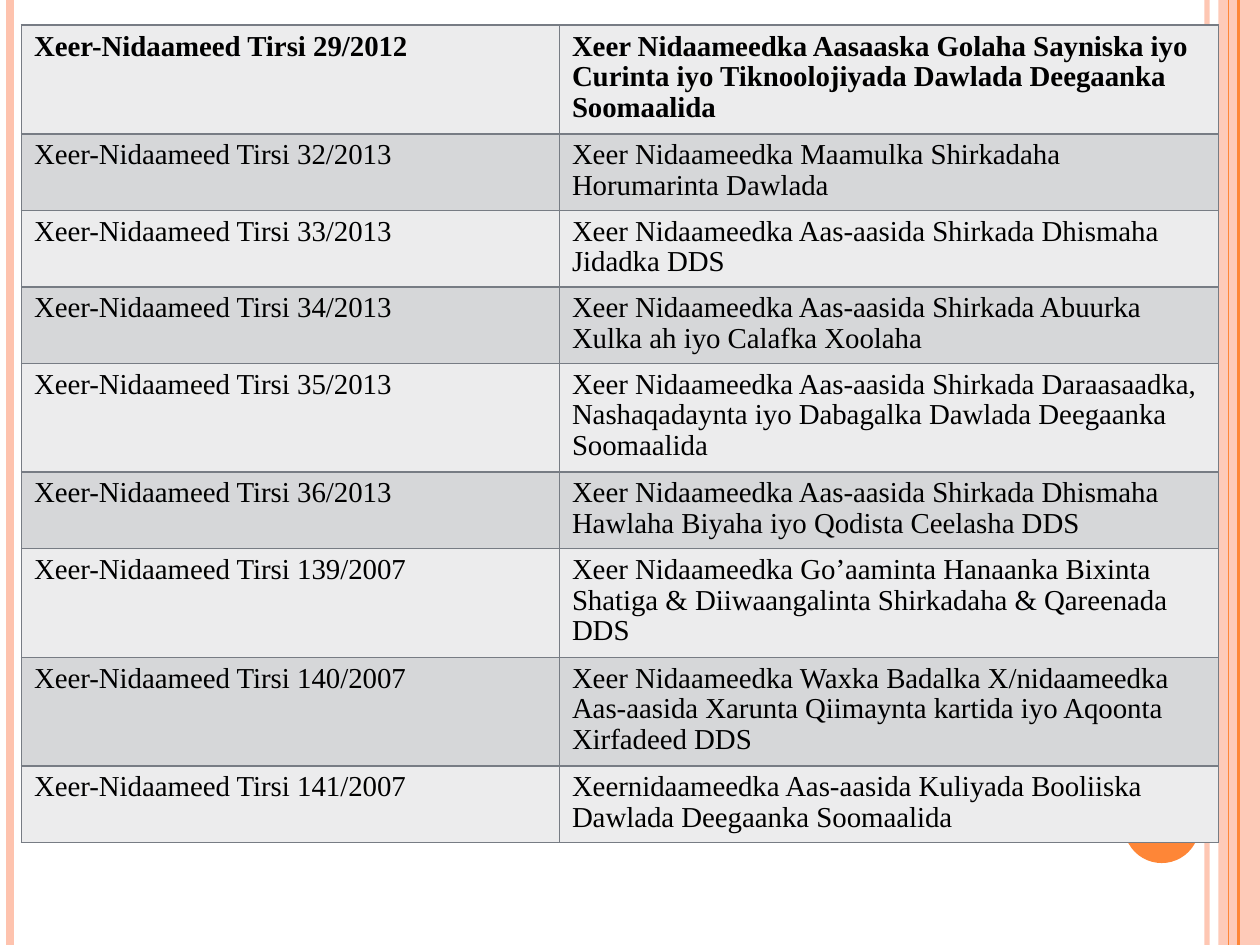
"""Build a slide with a two-column table of numbered regulations."""
from lxml import etree
from pptx import Presentation
from pptx.dml.color import RGBColor
from pptx.enum.shapes import MSO_CONNECTOR, MSO_SHAPE
from pptx.oxml.ns import qn
from pptx.util import Inches, Pt

LINE = MSO_CONNECTOR.STRAIGHT
RECT, OVAL = MSO_SHAPE.RECTANGLE, MSO_SHAPE.OVAL
PEACH, ORANGE, GREY = "FEC3AE", "FE8637", "777C84"
BANDS = ["ECECED", "D6D7D9"]
LAWS = [
    ("29/2012", "Xeer Nidaameedka Aasaaska Golaha Sayniska iyo Curinta iyo Tiknoolojiyada Dawlada Deegaanka Soomaalida", 3),
    ("32/2013", "Xeer Nidaameedka Maamulka Shirkadaha Horumarinta Dawlada", 2),
    ("33/2013", "Xeer Nidaameedka Aas-aasida Shirkada Dhismaha Jidadka DDS", 2),
    ("34/2013", "Xeer Nidaameedka Aas-aasida Shirkada Abuurka Xulka ah iyo Calafka Xoolaha", 2),
    ("35/2013", "Xeer Nidaameedka Aas-aasida Shirkada Daraasaadka, Nashaqadaynta iyo Dabagalka Dawlada Deegaanka Soomaalida", 3),
    ("36/2013", "Xeer Nidaameedka Aas-aasida Shirkada Dhismaha Hawlaha Biyaha iyo Qodista Ceelasha DDS", 2),
    ("139/2007", "Xeer Nidaameedka Go’aaminta Hanaanka Bixinta Shatiga & Diiwaangalinta Shirkadaha & Qareenada DDS", 3),
    ("140/2007", "Xeer Nidaameedka Waxka Badalka X/nidaameedka Aas-aasida Xarunta Qiimaynta kartida iyo Aqoonta Xirfadeed DDS", 3),
    ("141/2007", "Xeernidaameedka Aas-aasida Kuliyada Booliiska Dawlada Deegaanka Soomaalida", 2),
]


def paint(fmt, color, alpha=100):
    fmt.solid()
    fmt.fore_color.rgb = RGBColor.from_string(color)
    if alpha < 100:
        node = fmt._xPr.find(qn("a:solidFill"))[0]
        etree.SubElement(node, qn("a:alpha"), val=str(alpha * 1000))


def edge(cell, side):
    props = cell._tc.get_or_add_tcPr()
    line = etree.Element(qn("a:" + side), w=str(Pt(1)))
    fill = etree.SubElement(line, qn("a:solidFill"))
    etree.SubElement(fill, qn("a:srgbClr"), val=GREY)
    return props, line


prs = Presentation()
prs.slide_width, prs.slide_height = Inches(10), Inches(7.5)
slide = prs.slides.add_slide(prs.slide_layouts[6])
shapes = slide.shapes

stripes = [(9.58, PEACH, 3, 93), (0.08, PEACH, 4.5, 100),
           (9.83, ORANGE, 1.5, 100), (9.75, ORANGE, 0.75, 100)]
blocks = [(RECT, 9.67, 0, 0.33, 7.5, PEACH, 87),
          (OVAL, 8.92, 6.25, 0.6, 0.6, ORANGE, 100)]

for kind, x, y, w, h, color, alpha in blocks:
    block = shapes.add_shape(kind, Inches(x), Inches(y), Inches(w), Inches(h))
    block.shadow.inherit = False
    block.line.fill.background()
    paint(block.fill, color, alpha)

for x, color, width, alpha in stripes:
    stripe = shapes.add_connector(LINE, Inches(x), 0, Inches(x), Inches(7.5))
    stripe.line.width = Pt(width)
    paint(stripe.line.fill, color, alpha)
    etree.SubElement(stripe._element.spPr, qn("a:effectLst"))

high = sum(0.1 + 0.254 * count for _, _, count in LAWS)
frame = shapes.add_table(len(LAWS), 2, Inches(0.17), Inches(0.2), Inches(9.5), Inches(high))
table = frame.table
for column, width in zip(table.columns, (4.27, 5.23)):
    column.width = Inches(width)

for r, (code, title, count) in enumerate(LAWS):
    table.rows[r].height = Inches(0.1 + 0.254 * count)
    for c, text in enumerate(("Xeer-Nidaameed Tirsi " + code, title)):
        cell = table.cell(r, c)
        cell.text_frame.text = text
        para = cell.text_frame.paragraphs[0]
        para.line_spacing = 0.96
        font = para.runs[0].font
        font.name, font.size, font.bold = "Times New Roman", Pt(16.5), r == 0
        paint(font.fill, "000000")
        for side in ("lnL", "lnR", "lnT", "lnB"):
            props, line = edge(cell, side)
            props.append(line)
        paint(cell.fill, BANDS[r % 2])

prs.save("out.pptx")
